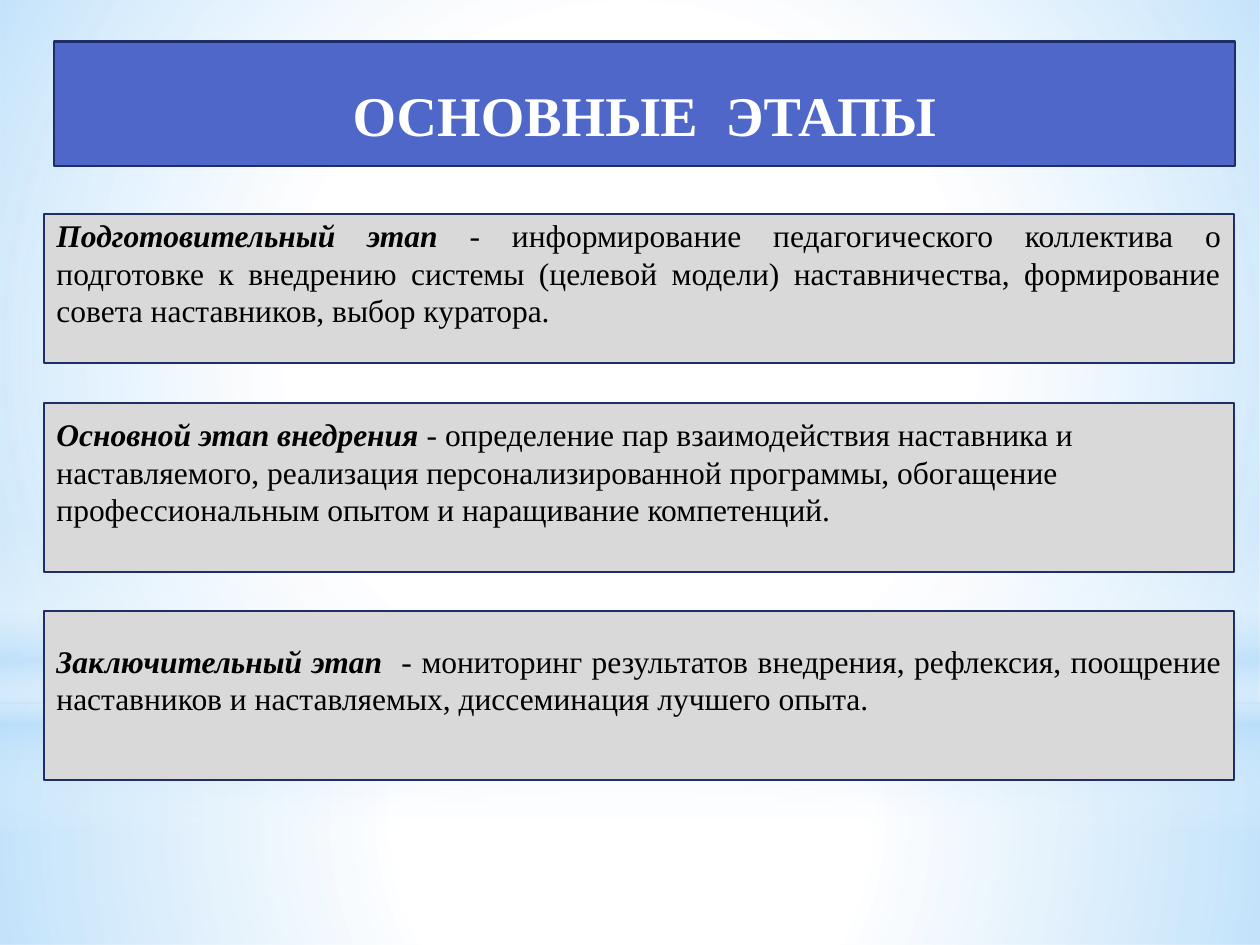
from dataclasses import dataclass

from lxml.etree import SubElement
from pptx import Presentation
from pptx.dml.color import RGBColor
from pptx.enum.shapes import MSO_SHAPE
from pptx.enum.text import MSO_ANCHOR, PP_ALIGN
from pptx.oxml.ns import qn
from pptx.util import Pt


@dataclass(frozen=True)
class Theme:
    font: str = "Times New Roman"
    title_size: float = 32
    body_size: float = 18
    line_width: float = 1.25
    white: str = "FFFFFF"
    sky: str = "B4DCFA"
    title_fill: str = "4E67C8"
    stage_fill: str = "D9D9D9"
    outline: str = "1F2E69"
    text: str = "000000"


THEME = Theme()
SLIDE_WIDTH, SLIDE_HEIGHT = 720, 540
HORIZON = 401.76
STAGE_LEFT, STAGE_WIDTH = 25.2, 679.8

# Each gradient stop: position, colour, opacity (all but colour in percent).
BACKGROUND = [
    (MSO_SHAPE.RECTANGLE, HORIZON, SLIDE_HEIGHT - HORIZON, True,
     [(0, THEME.white, 91), (37, THEME.white, 76), (100, THEME.sky, 79)]),
    (MSO_SHAPE.RECTANGLE, 0, HORIZON, True,
     [(0, THEME.white, 89), (48, THEME.white, 62), (100, THEME.sky, 79)]),
    (MSO_SHAPE.RECTANGLE, 296.64, 180, False,
     [(0, THEME.white, 0), (29, THEME.white, 30), (45, THEME.sky, 40),
      (55, THEME.white, 26), (65, THEME.sky, 60), (100, THEME.white, 0)]),
    (MSO_SHAPE.OVAL, 126, HORIZON, True,
     [(0, THEME.white, 100), (56, THEME.white, 0)]),
]

# Each stage: top, height, alignment, name, dash, description.
STAGES = [
    (122.4, 85, PP_ALIGN.JUSTIFY, "Подготовительный этап ", "- ",
     "информирование педагогического коллектива о подготовке к внедрению "
     "системы (целевой модели) наставничества, формирование совета "
     "наставников, выбор куратора."),
    (230.4, 96.5, PP_ALIGN.LEFT, "Основной этап внедрения ", "- ",
     "определение пар взаимодействия наставника и наставляемого, реализация "
     "персонализированной программы, обогащение профессиональным опытом и "
     "наращивание компетенций."),
    (349.2, 96.5, PP_ALIGN.JUSTIFY, "Заключительный этап", "  - ",
     "мониторинг результатов внедрения, рефлексия, поощрение наставников и "
     "наставляемых, диссеминация лучшего опыта."),
]


def add_plain_shape(slide, kind, left, top, width, height):
    shape = slide.shapes.add_shape(kind, Pt(left), Pt(top), Pt(width), Pt(height))
    shape.shadow.inherit = False
    return shape


def set_gradient(shape, stops, radial):
    """Fill with translucent stops, from the centre out or from top to bottom."""
    shape.fill.gradient()
    gradient = shape.element.spPr.find(qn("a:gradFill"))
    for child in list(gradient):
        gradient.remove(child)
    stop_list = SubElement(gradient, qn("a:gsLst"))
    for position, colour, opacity in stops:
        stop = SubElement(stop_list, qn("a:gs"), pos=str(position * 1000))
        colour_element = SubElement(stop, qn("a:srgbClr"), val=colour)
        SubElement(colour_element, qn("a:alpha"), val=str(opacity * 1000))
    if radial:
        direction = SubElement(gradient, qn("a:path"), {"path": "circle"})
        centre = dict.fromkeys("ltrb", "50000")
        SubElement(direction, qn("a:fillToRect"), centre)
    else:
        SubElement(gradient, qn("a:lin"), ang="5400000", scaled="0")


def add_background(slide):
    for kind, top, height, radial, stops in BACKGROUND:
        shape = add_plain_shape(slide, kind, 0, top, SLIDE_WIDTH, height)
        set_gradient(shape, stops, radial)
        shape.line.fill.background()


def add_panel(slide, left, top, width, height, colour):
    panel = add_plain_shape(slide, MSO_SHAPE.RECTANGLE, left, top, width, height)
    panel.fill.solid()
    panel.fill.fore_color.rgb = RGBColor.from_string(colour)
    panel.line.color.rgb = RGBColor.from_string(THEME.outline)
    panel.line.width = Pt(THEME.line_width)
    panel.text_frame.word_wrap = True
    panel.text_frame.vertical_anchor = MSO_ANCHOR.MIDDLE
    return panel


def format_run(run, size, colour, bold=False, italic=False):
    run.font.name = THEME.font
    run.font.size = Pt(size)
    run.font.color.rgb = RGBColor.from_string(colour)
    run.font.bold = bold
    run.font.italic = italic


def add_title(slide, text):
    text_frame = add_panel(slide, 31, 23.75, 674.5, 71.3, THEME.title_fill).text_frame
    text_frame.margin_top = Pt(9.6)
    text_frame.text = text
    paragraph = text_frame.paragraphs[0]
    paragraph.alignment = PP_ALIGN.CENTER
    paragraph.line_spacing = 1.15
    format_run(paragraph.runs[0], THEME.title_size, THEME.white, bold=True)


def add_stage(slide, top, height, alignment, name, dash, description):
    panel = add_panel(slide, STAGE_LEFT, top, STAGE_WIDTH, height, THEME.stage_fill)
    panel.text_frame.margin_bottom = Pt(22)
    paragraph = panel.text_frame.paragraphs[0]
    paragraph.alignment = alignment
    for text, bold, italic in ((name, True, True), (dash, False, True),
                               (description, False, False)):
        run = paragraph.add_run()
        run.text = text
        format_run(run, THEME.body_size, THEME.text, bold, italic)


def main():
    presentation = Presentation()
    presentation.slide_width = Pt(SLIDE_WIDTH)
    presentation.slide_height = Pt(SLIDE_HEIGHT)
    slide = presentation.slides.add_slide(presentation.slide_layouts[6])
    add_background(slide)
    add_title(slide, "ОСНОВНЫЕ  ЭТАПЫ")
    for stage in STAGES:
        add_stage(slide, *stage)
    presentation.save("out.pptx")


if __name__ == "__main__":
    main()
